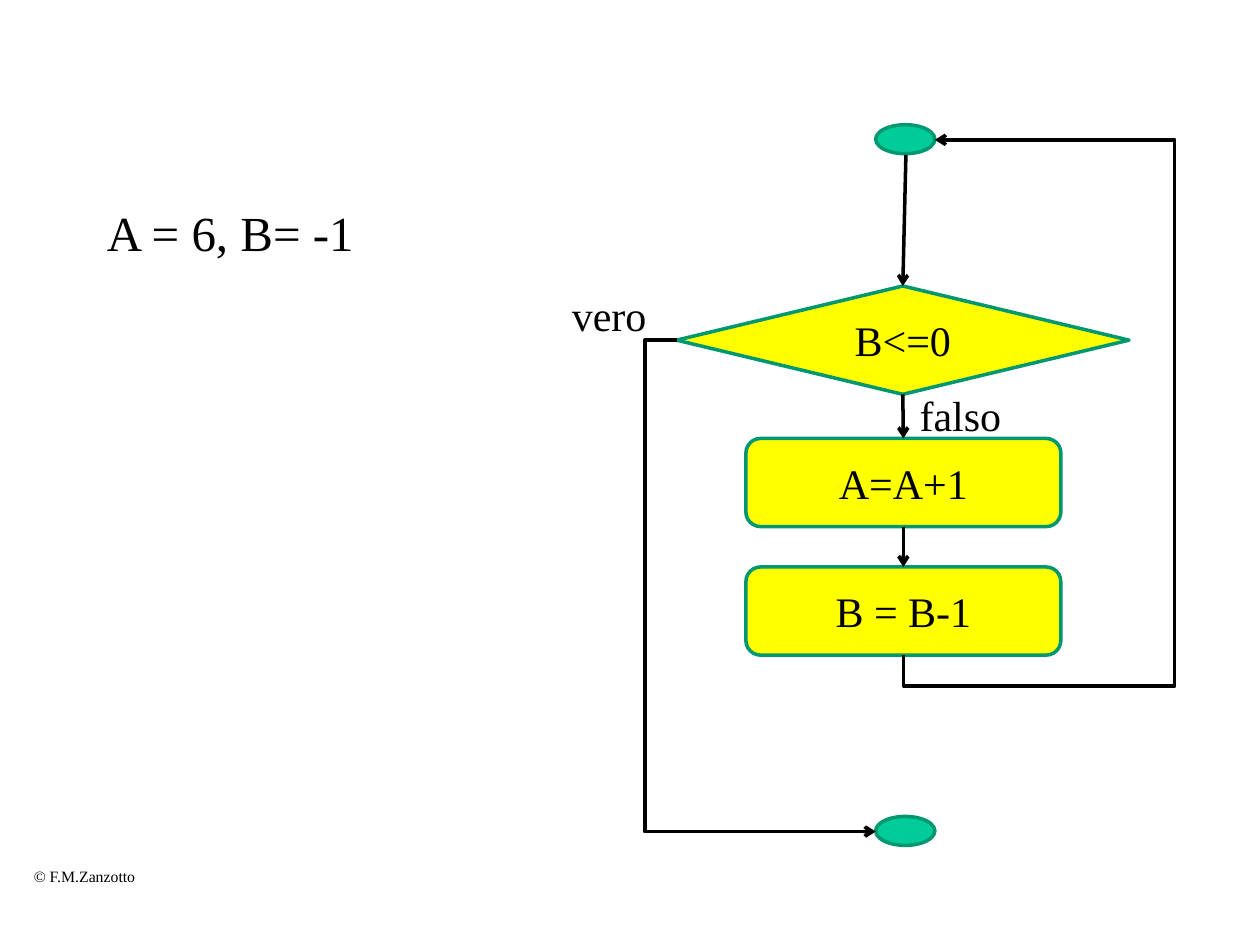
from dataclasses import dataclass

from lxml.etree import SubElement
from pptx import Presentation
from pptx.dml.color import RGBColor
from pptx.enum.shapes import MSO_CONNECTOR as Link, MSO_SHAPE as Preset
from pptx.enum.text import MSO_ANCHOR as Anchor, PP_ALIGN as Align
from pptx.oxml.ns import qn
from pptx.util import Inches, Pt


@dataclass(frozen=True)
class Theme:
    """Colours, font and sizes of the flowchart."""
    ink: RGBColor = RGBColor(0, 0, 0)
    step: RGBColor = RGBColor(0xFF, 0xFF, 0)
    terminal: RGBColor = RGBColor(0, 0xCC, 0x99)
    outline: RGBColor = RGBColor(0, 0x97, 0x71)
    font: str = "Times New Roman"
    body: int = 28
    label: int = 24
    footer: int = 9
    stroke: int = 2


THEME = Theme()


def write(shape, text, size, align=Align.LEFT):
    """Put one formatted line of text into a shape."""
    paragraph = shape.text_frame.paragraphs[0]
    paragraph.text = text
    paragraph.alignment = align
    paragraph.font.size = Pt(size)
    paragraph.font.name = THEME.font
    paragraph.font.color.rgb = THEME.ink


def add_text(slide, text, box, size, wrap=False):
    """Add a text box."""
    shape = slide.shapes.add_textbox(*map(Inches, box))
    shape.text_frame.word_wrap = wrap
    write(shape, text, size)


def add_node(slide, preset, box, fill, text=None):
    """Add a flowchart node."""
    shape = slide.shapes.add_shape(preset, *map(Inches, box))
    shape.shadow.inherit = False
    shape.fill.solid()
    shape.fill.fore_color.rgb = fill
    shape.line.color.rgb = THEME.outline
    shape.line.width = Pt(THEME.stroke)
    if text:
        shape.text_frame.vertical_anchor = Anchor.MIDDLE
        write(shape, text, THEME.label, Align.CENTER)
    return shape


def add_arrow(slide, start, end, kind=Link.STRAIGHT):
    """Add a connector with an open arrowhead at its end."""
    arrow = slide.shapes.add_connector(kind, *map(Inches, start + end))
    arrow.line.color.rgb = THEME.ink
    arrow.line.width = Pt(THEME.stroke)
    properties = arrow._element.spPr
    SubElement(properties.find(qn("a:ln")), qn("a:tailEnd"), type="arrow")
    SubElement(properties, qn("a:effectLst"))
    return arrow


def bend(arrow, preset, *adjustments):
    """Set the route of an elbow connector."""
    geometry = arrow._element.spPr.find(qn("a:prstGeom"))
    geometry.set("prst", preset)
    guides = geometry.find(qn("a:avLst"))
    for number, value in enumerate(adjustments, 1):
        SubElement(guides, qn("a:gd"), name=f"adj{number}",
                   fmla=f"val {round(value * 100000)}")


def join(slide, upper, lower):
    """Join the bottom of one node to the top of the next."""
    arrow = add_arrow(slide, (7.17, 3), (7.17, 4))
    arrow.begin_connect(upper, 2)
    arrow.end_connect(lower, 0)


def add_loop(slide):
    """Add the arrow from the last step back to the start."""
    arrow = add_arrow(slide, (5.25, 3.03), (9.34, 3.28), Link.ELBOW)
    arrow._element.spPr.find(qn("a:xfrm")).set("rot", str(270 * 60000))
    bend(arrow, "bentConnector4", -0.06, 8.61)


def add_exit(slide):
    """Add the arrow from the test to the end."""
    arrow = add_arrow(slide, (5.37, 2.7), (6.95, 6.6), Link.ELBOW)
    bend(arrow, "bentConnector3", -0.16)


def main():
    """Build the flowchart slide."""
    presentation = Presentation()
    presentation.slide_width = Inches(10)
    presentation.slide_height = Inches(7.5)
    slide = presentation.slides.add_slide(presentation.slide_layouts[6])

    add_text(slide, "© F.M.Zanzotto", (0.17, 6.83, 1.02, 0.25), THEME.footer)
    add_text(slide, "A = 6, B= -1", (0.75, 1.56, 8.5, 5.11), THEME.body, wrap=True)

    increment, decrement = [
        add_node(slide, Preset.ROUNDED_RECTANGLE, (5.92, top, 2.5, 0.7), THEME.step, text)
        for top, text in ((3.48, "A=A+1"), (4.5, "B = B-1"))
    ]
    test = add_node(slide, Preset.DIAMOND, (5.37, 2.27, 3.59, 0.86), THEME.step, "B<=0")
    for top in (0.99, 6.48):
        add_node(slide, Preset.OVAL, (6.95, top, 0.47, 0.23), THEME.terminal)

    add_arrow(slide, (7.19, 1.23), (7.17, 2.27)).end_connect(test, 0)
    join(slide, test, increment)
    join(slide, increment, decrement)
    add_exit(slide)
    add_loop(slide)

    add_text(slide, "falso", (7.2, 3.04, 0.86, 0.5), THEME.label)
    add_text(slide, "vero", (4.44, 2.25, 0.8, 0.5), THEME.label)
    presentation.save("out.pptx")


if __name__ == "__main__":
    main()
